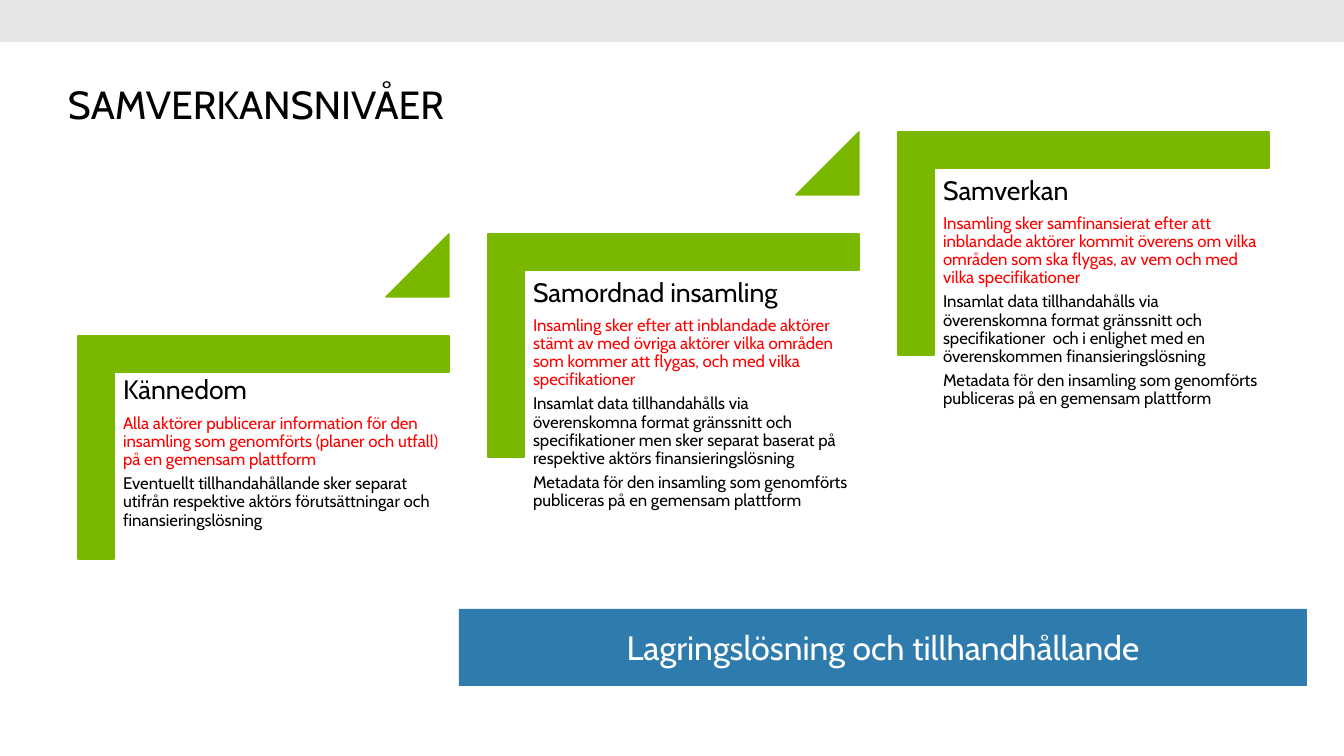
import pptx
import pptx.dml.color
import pptx.enum.shapes
import pptx.enum.text
import pptx.util
from dataclasses import dataclass

PX = 914400 / 100.8
SHAPE = pptx.enum.shapes.MSO_SHAPE
ANCHOR = pptx.enum.text.MSO_ANCHOR
ALIGN = pptx.enum.text.PP_ALIGN


@dataclass(frozen=True)
class Theme:
    font: str = "Cabin"
    green: str = "7AB800"
    blue: str = "2D7CAD"
    grey: str = "E7E6E6"
    red: str = "FF0000"
    black: str = "000000"
    white: str = "FFFFFF"
    title: int = 28
    bar: int = 24
    heading: int = 19
    body: int = 12


THEME = Theme()
METADATA = "Metadata för den insamling som genomförts publiceras på en gemensam plattform"
LEVELS = [
    ("Kännedom", 33, [
        "Alla aktörer publicerar information för den insamling som genomförts (planer och utfall) på en gemensam plattform",
        "Eventuellt tillhandahållande sker separat utifrån respektive aktörs förutsättningar och finansieringslösning",
    ]),
    ("Samordnad insamling", 37, [
        "Insamling sker efter att inblandade aktörer stämt av med övriga aktörer vilka områden som kommer att flygas, och med vilka specifikationer",
        "Insamlat data tillhandahålls via överenskomna format gränssnitt och specifikationer men sker separat baserat på respektive aktörs finansieringslösning",
        METADATA,
    ]),
    ("Samverkan", 37, [
        "Insamling sker samfinansierat efter att inblandade aktörer kommit överens om vilka områden som ska flygas, av vem och med vilka specifikationer",
        "Insamlat data tillhandahålls via överenskomna format gränssnitt och specifikationer  och i enlighet med en överenskommen finansieringslösning",
        METADATA,
    ]),
]
LEFT, TOP = 78, 336
STEP_X, STEP_Y = 410, 102
STEP_W, STEP_H = 371, 223
TRIANGLE = 63


def px(*lengths):
    return [round(n * PX) for n in lengths]


def rgb(color):
    return pptx.dml.color.RGBColor.from_string(color)


def add_run(p, text, size, color):
    r = p.add_run()
    r.text = text
    r.font.name = THEME.font
    r.font.size = pptx.util.Pt(size)
    r.font.color.rgb = rgb(color)


def add_filled(s, kind, box, color, outlined=False):
    sp = s.shapes.add_shape(kind, *px(*box))
    sp.shadow.inherit = False
    sp.fill.solid()
    sp.fill.fore_color.rgb = rgb(color)
    if outlined:
        sp.line.color.rgb = rgb(color)
        sp.line.width = pptx.util.Pt(1)
    else:
        sp.line.fill.background()
    return sp


def add_text(s, box, inset, paragraphs, line_spacing=1.0):
    tf = s.shapes.add_textbox(*px(*box)).text_frame
    tf.word_wrap = True
    tf.vertical_anchor = ANCHOR.TOP
    tf.margin_left = tf.margin_top = tf.margin_right = tf.margin_bottom = px(inset)[0]
    for i, (text, size, color) in enumerate(paragraphs):
        p = tf.add_paragraph() if i else tf.paragraphs[0]
        p.line_spacing = line_spacing
        p.space_after = pptx.util.Pt(round(size * 0.35, 1))
        add_run(p, text, size, color)


def add_corner(s, x, y):
    inset = (STEP_W - STEP_H) / 2
    box = (x + inset, y - inset, STEP_H, STEP_W)
    sp = add_filled(s, SHAPE.CORNER, box, THEME.green, outlined=True)
    sp.rotation = 90
    sp.adjustments[0] = sp.adjustments[1] = 0.161


def add_triangle(s, x, y):
    box = (x, y, TRIANGLE, TRIANGLE)
    sp = add_filled(s, SHAPE.ISOSCELES_TRIANGLE, box, THEME.green, outlined=True)
    sp.adjustments[0] = 1


def add_level(s, index, heading, text_drop, body):
    x, y = LEFT + index * STEP_X, TOP - index * STEP_Y
    add_corner(s, x, y)
    paragraphs = [(heading, THEME.heading, THEME.black)]
    for i, text in enumerate(body):
        paragraphs.append((text, THEME.body, THEME.black if i else THEME.red))
    add_text(s, (x + 37, y + text_drop, 335, 293), 8, paragraphs, 0.9)
    if index < len(LEVELS) - 1:
        add_triangle(s, x + STEP_W - TRIANGLE, y - STEP_Y)


def add_bar(s, box, text):
    tf = add_filled(s, SHAPE.RECTANGLE, box, THEME.blue).text_frame
    tf.word_wrap = True
    tf.vertical_anchor = ANCHOR.MIDDLE
    p = tf.paragraphs[0]
    p.alignment = ALIGN.CENTER
    add_run(p, text, THEME.bar, THEME.white)


def main():
    prs = pptx.Presentation()
    prs.slide_width, prs.slide_height = px(1344, 756)
    s = prs.slides.add_slide(prs.slide_layouts[6])
    add_filled(s, SHAPE.RECTANGLE, (0, 0, 1344, 42), THEME.grey)
    add_text(s, (68, 80, 1159, 60), 0, [("SAMVERKANSNIVÅER", THEME.title, THEME.black)])
    for index, level in enumerate(LEVELS):
        add_level(s, index, *level)
    add_bar(s, (459, 609, 848, 77), "Lagringslösning och tillhandhållande")
    prs.save("out.pptx")


if __name__ == "__main__":
    main()
